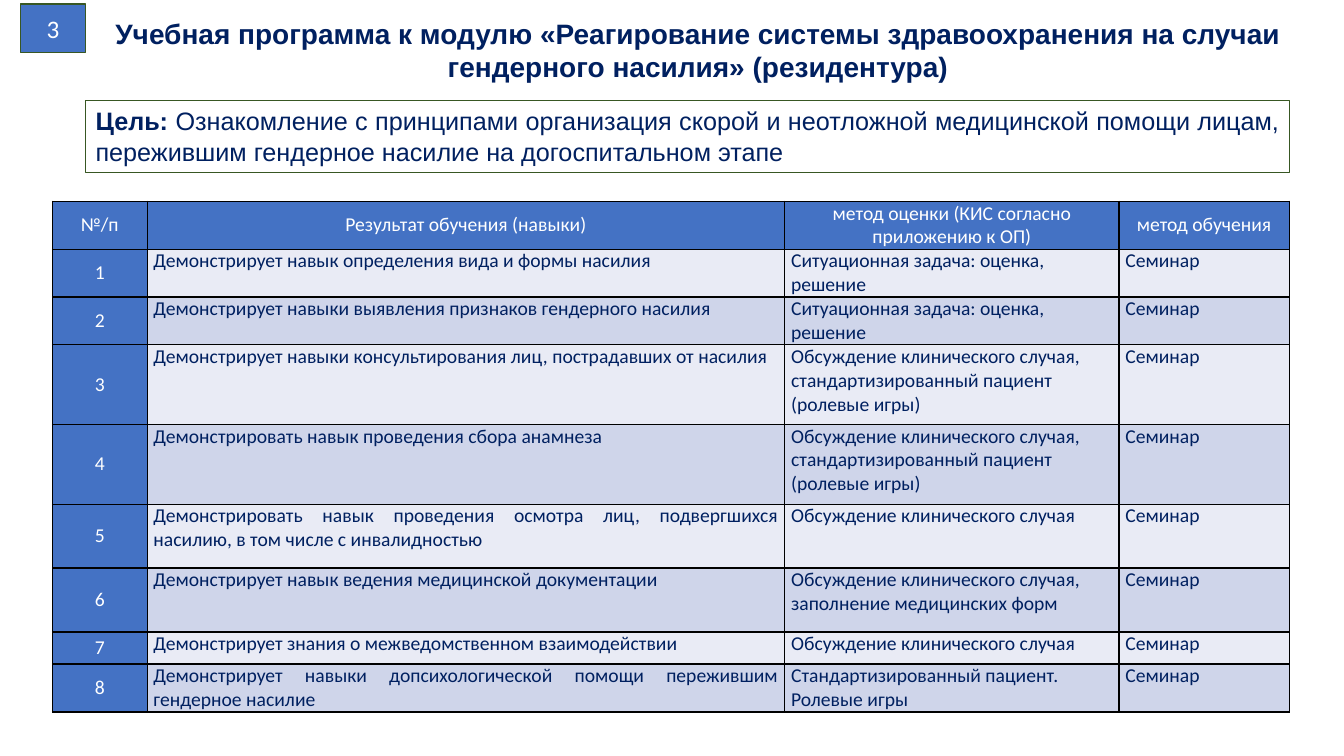
from lxml import etree
from pptx import Presentation
from pptx.dml.color import RGBColor
from pptx.enum.shapes import MSO_SHAPE
from pptx.enum.text import MSO_ANCHOR, MSO_AUTO_SIZE, PP_ALIGN
from pptx.oxml.ns import qn
from pptx.util import Cm, Pt

RECT = MSO_SHAPE.RECTANGLE
TOP, MIDDLE = MSO_ANCHOR.TOP, MSO_ANCHOR.MIDDLE
NOFIT = MSO_AUTO_SIZE.NONE
LEFT, CENTER, JUST = PP_ALIGN.LEFT, PP_ALIGN.CENTER, PP_ALIGN.JUSTIFY

NAVY = RGBColor(0x00, 0x20, 0x60)
BLUE = RGBColor(0x44, 0x72, 0xC4)
GREEN = RGBColor(0x38, 0x57, 0x23)
WHITE = RGBColor(0xFF, 0xFF, 0xFF)
PALE = RGBColor(0xE9, 0xEB, 0xF5)
SOFT = RGBColor(0xCF, 0xD5, 0xEA)
BLACK = RGBColor(0x00, 0x00, 0x00)

TITLE = {"name": "Arial", "size": Pt(20), "bold": True}
LABEL = {"name": "Arial", "size": Pt(18), "bold": True}
GOAL = {**LABEL, "bold": False}
BADGE = {"name": "Calibri", "size": Pt(18), "bold": False}
CELL = {**BADGE, "size": Pt(14)}
INSET = {"margin_left": Cm(0.16), "margin_right": Cm(0.16),
         "margin_top": 0, "margin_bottom": 0}

HEAD = ("№/п", "Результат обучения (навыки)",
        "метод оценки (КИС согласно приложению к ОП)", "метод обучения")
TASK = "Ситуационная задача: оценка, решение"
CASE = "Обсуждение клинического случая"
ROLE = CASE + ", стандартизированный пациент (ролевые игры)"
CLASS = "Семинар"
SKILLS = (
    ("Демонстрирует навык определения вида и формы насилия", TASK),
    ("Демонстрирует навыки выявления признаков гендерного насилия", TASK),
    ("Демонстрирует навыки консультирования лиц, пострадавших от насилия", ROLE),
    ("Демонстрировать навык проведения сбора анамнеза", ROLE),
    ("Демонстрировать навык проведения осмотра лиц, подвергшихся насилию, "
     "в том числе с инвалидностью", CASE),
    ("Демонстрирует навык ведения медицинской документации",
     CASE + ", заполнение медицинских форм"),
    ("Демонстрирует знания о межведомственном взаимодействии", CASE),
    ("Демонстрирует навыки допсихологической помощи пережившим гендерное насилие",
     "Стандартизированный пациент. Ролевые игры"),
)
WIDTHS = (2.39, 16.08, 8.43, 4.29)
HEIGHTS = (1.21, 1.2, 1.2, 2.01, 2.01, 1.61, 1.61, 0.81, 1.21)


def apply(target, values):
    for key, value in values.items():
        setattr(target, key, value)


def write(para, text, fmt, color, align):
    para.alignment = align
    run = para.add_run()
    run.text = text
    apply(run.font, fmt)
    run.font.color.rgb = color


def add_title(slide, box):
    title = slide.shapes.title
    apply(title, dict(zip(("left", "top", "width", "height"), box)))
    frame = title.text_frame
    apply(frame, {"auto_size": NOFIT, "word_wrap": True, "vertical_anchor": TOP})
    write(frame.paragraphs[0], "Учебная программа к модулю «Реагирование системы "
          "здравоохранения на случаи гендерного насилия» (резидентура)",
          TITLE, NAVY, CENTER)


def add_rect(slide, box, width, anchor):
    rect = slide.shapes.add_shape(RECT, *box)
    rect.shadow.inherit = False
    rect.fill.background()
    rect.line.color.rgb = GREEN
    rect.line.width = width
    apply(rect.text_frame, {"word_wrap": True, "vertical_anchor": anchor})
    return rect


def add_goal(slide, box):
    para = add_rect(slide, box, Pt(0.75), TOP).text_frame.paragraphs[0]
    write(para, "Цель: ", LABEL, NAVY, JUST)
    write(para, "Ознакомление с принципами организация скорой и неотложной "
          "медицинской помощи лицам, пережившим гендерное насилие "
          "на догоспитальном этапе", GOAL, NAVY, JUST)


def add_badge(slide, box):
    badge = add_rect(slide, box, Pt(1), MIDDLE)
    badge.fill.solid()
    badge.fill.fore_color.rgb = BLUE
    write(badge.text_frame.paragraphs[0], "3", BADGE, WHITE, CENTER)


def add_edges(cell):
    props = cell._tc.get_or_add_tcPr()
    for side in ("lnL", "lnR", "lnT", "lnB"):
        line = etree.SubElement(props, qn("a:" + side), w=str(Pt(1)))
        fill = etree.SubElement(line, qn("a:solidFill"))
        etree.SubElement(fill, qn("a:srgbClr"), val=str(BLACK))


def fill_cell(cell, text, fill, color, align, anchor):
    add_edges(cell)
    cell.fill.solid()
    cell.fill.fore_color.rgb = fill
    apply(cell, {**INSET, "vertical_anchor": anchor})
    write(cell.text_frame.paragraphs[0], text, CELL, color, align)


def add_plan(slide, box):
    rows = [HEAD] + [(str(num), skill, check, CLASS)
                     for num, (skill, check) in enumerate(SKILLS, 1)]
    table = slide.shapes.add_table(len(rows), len(HEAD), *box).table
    for col, width in zip(table.columns, WIDTHS):
        col.width = int(box[2] * width / sum(WIDTHS))
    for row, height in zip(table.rows, HEIGHTS):
        row.height = int(box[3] * height / sum(HEIGHTS))
    for r, texts in enumerate(rows):
        for c, text in enumerate(texts):
            if r == 0 or c == 0:
                look = (BLUE, WHITE, CENTER, MIDDLE)
            else:
                align = JUST if c == 1 and r > 1 else LEFT
                look = (PALE if r % 2 else SOFT, NAVY, align, TOP)
            fill_cell(table.cell(r, c), text, *look)


def main():
    deck = Presentation()
    apply(deck, {"slide_width": Cm(33.87), "slide_height": Cm(19.05)})
    slide = deck.slides.add_slide(deck.slide_layouts[5])
    add_title(slide, (Cm(2.16), Cm(0.28), Cm(30.86), Cm(1.96)))
    add_goal(slide, (Cm(2.16), Cm(2.54), Cm(30.35), Cm(1.8)))
    add_badge(slide, (Cm(0.51), Cm(0.1), Cm(1.65), Cm(1.22)))
    add_plan(slide, (Cm(1.32), Cm(5.07), Cm(31.17), Cm(12.87)))
    deck.save("out.pptx")


if __name__ == "__main__":
    main()
